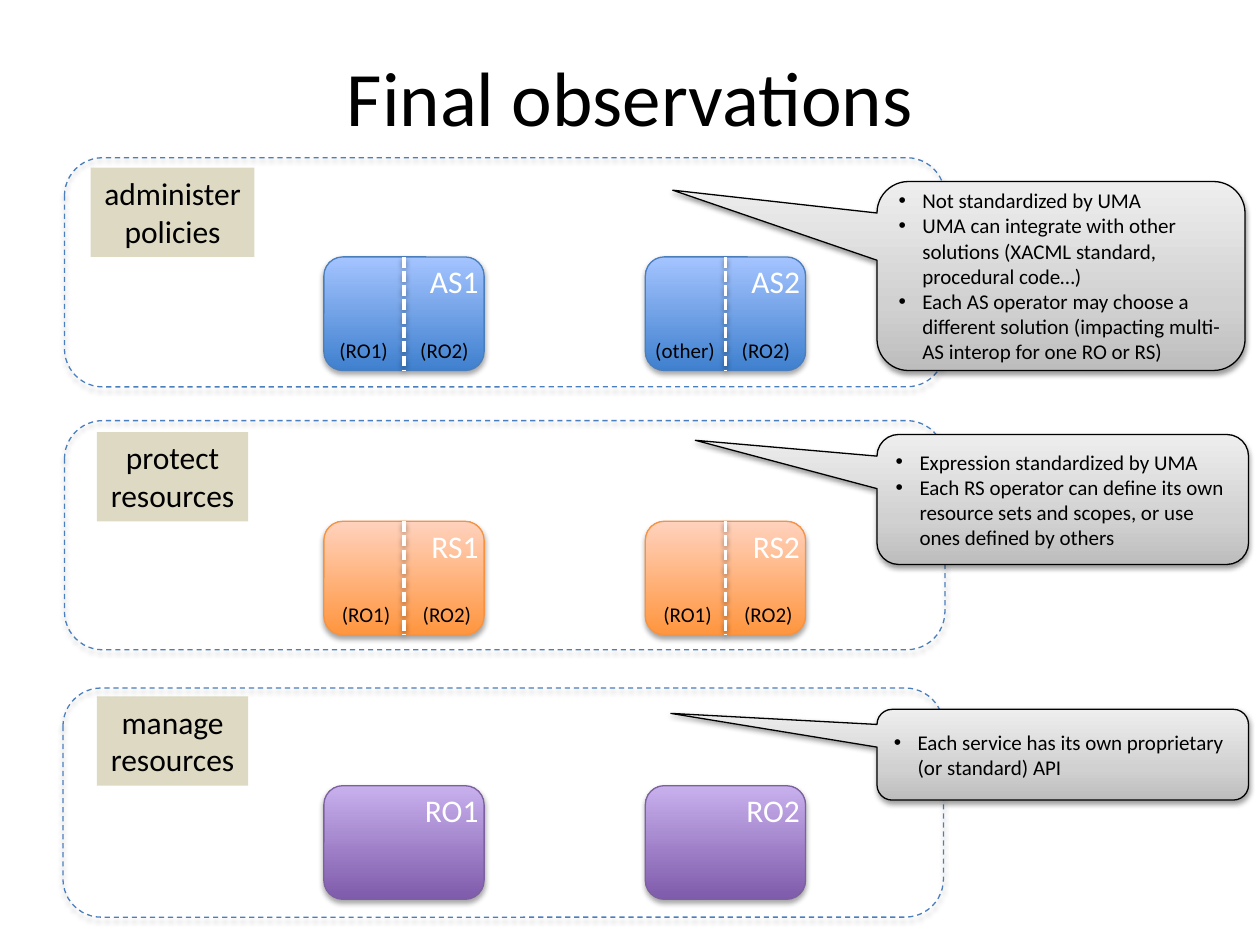
from dataclasses import dataclass

from lxml import etree
from pptx import Presentation
from pptx.dml.color import RGBColor
from pptx.enum import dml, shapes, text
from pptx.oxml import ns
from pptx.util import Cm, Pt

BLACK = RGBColor(0x00, 0x00, 0x00)
WHITE = RGBColor(0xFF, 0xFF, 0xFF)
TAN = RGBColor(0xDD, 0xD9, 0xC3)
FRAME_BLUE = RGBColor(0x4B, 0x7E, 0xBC)
BLUES = RGBColor(0x3F, 0x80, 0xCE), RGBColor(0xA4, 0xC4, 0xFF)
ORANGE_LINE = RGBColor(0xF6, 0x92, 0x40)
ORANGES = RGBColor(0xFF, 0x95, 0x3E), RGBColor(0xFF, 0xD2, 0xBD)
PURPLE_LINE = RGBColor(0x7D, 0x60, 0xA0)
PURPLES = RGBColor(0x7F, 0x5B, 0xAB), RGBColor(0xC8, 0xB0, 0xED)
GREYS = (RGBColor(0xBD, 0xBD, 0xBD), RGBColor(0xD1, 0xD1, 0xD1),
         RGBColor(0xEE, 0xEE, 0xEE))

FONT = "Calibri"
LEFT, CENTER, RIGHT = (text.PP_ALIGN.LEFT, text.PP_ALIGN.CENTER,
                       text.PP_ALIGN.RIGHT)
SHAPE = shapes.MSO_SHAPE

# Lengths in centimetres
ROW_TOP, ROW_PITCH = 3.38, 5.33
BOX_LEFTS, BOX_OFFSET = (6.53, 13.01), 1.8
BOX_WIDTH, BOX_HEIGHT = 3.23, 2.29
OWNER_CENTERS, OWNER_OFFSET = (0.8, 2.43), 3.3
OWNER_WIDTH, OWNER_HEIGHT = 1.8, 0.76
LABEL_CENTER, LABEL_HEIGHT = 3.48, 1.8
CALLOUT_LEFT = 17.68


@dataclass
class Row:
    label: tuple
    label_width: float
    frame: tuple        # left, top
    boxes: tuple
    stops: tuple
    line: RGBColor
    owners: tuple       # one pair for each divided box
    owner_shift: float
    callout: tuple      # top, width, height
    tail: tuple
    notes: tuple


ROWS = (
    Row(("administer", "policies"), 3.3, (1.3, 3.18), ("AS1", "AS2"),
        BLUES, FRAME_BLUE, (("(RO1)", "(RO2)"), ("(other)", "(RO2)")), 0,
        (3.66, 7.42, 3.81), (-1.055, -0.454),
        ("Not standardized by UMA",
         "UMA can integrate with other solutions (XACML standard, "
         "procedural code…)",
         "Each AS operator may choose a different solution (impacting "
         "multi-AS interop for one RO or RS)")),
    Row(("protect", "resources"), 3.05, (1.3, 8.48), ("RS1", "RS2"),
        ORANGES, ORANGE_LINE, (("(RO1)", "(RO2)"), ("(RO1)", "(RO2)")), 0.05,
        (8.76, 7.49, 2.62), (-0.989, -0.455),
        ("Expression standardized by UMA",
         "Each RS operator can define its own resource sets and scopes, "
         "or use ones defined by others")),
    Row(("manage", "resources"), 3.05, (1.27, 13.87), ("RO1", "RO2"),
        PURPLES, PURPLE_LINE, ((), ()), 0,
        (14.3, 7.49, 1.83), (-1.055, -0.455),
        ("Each service has its own proprietary (or standard) API",)),
)


def add_shadow(shape, alpha, distance):
    """Drop a soft black shadow straight down; call after the line is set."""
    effects = etree.SubElement(shape._element.spPr, ns.qn("a:effectLst"))
    shadow = etree.SubElement(
        effects, ns.qn("a:outerShdw"), blurRad=str(Pt(3.1)),
        dist=str(Pt(distance)), dir="5400000", rotWithShape="0")
    color = etree.SubElement(shadow, ns.qn("a:srgbClr"), val=str(BLACK))
    etree.SubElement(color, ns.qn("a:alpha"), val=str(alpha * 1000))


def fill_gradient(shape, colors, positions):
    """Fill from the bottom up with the given colour stops."""
    shape.fill.gradient()
    shape.fill.gradient_angle = 90
    stops = shape._element.spPr.find(".//" + ns.qn("a:gsLst"))
    for stop in list(stops):
        stops.remove(stop)
    for color, position in zip(colors, positions):
        stop = etree.SubElement(stops, ns.qn("a:gs"),
                                pos=str(position * 1000))
        etree.SubElement(stop, ns.qn("a:srgbClr"), val=str(color))


def set_line(shape, color, width, dash=None):
    shape.line.color.rgb = color
    shape.line.width = Pt(width)
    if dash:
        shape.line.dash_style = dash


def write(shape, lines, size, color=BLACK, align=CENTER, wrap=True,
          anchor=text.MSO_ANCHOR.TOP):
    frame = shape.text_frame
    frame.text = "\n".join(lines)
    frame.word_wrap = wrap
    frame.vertical_anchor = anchor
    for para in frame.paragraphs:
        para.alignment = align
        para.font.name = FONT
        para.font.size = Pt(size)
        para.font.color.rgb = color


def add_bullets(shape):
    for para in shape.text_frame.paragraphs:
        props = para._p.get_or_add_pPr()
        props.set("marL", str(Cm(0.48)))
        props.set("indent", str(-Cm(0.48)))
        bullet_font = etree.Element(ns.qn("a:buFont"), typeface="Arial")
        bullet = etree.Element(ns.qn("a:buChar"), char="•")
        props.insert(0, bullet_font)
        props.insert(1, bullet)


def add_box(page, name, left, top, row):
    box = page.shapes.add_shape(SHAPE.ROUNDED_RECTANGLE, Cm(left), Cm(top),
                                Cm(BOX_WIDTH), Cm(BOX_HEIGHT))
    fill_gradient(box, row.stops, (0, 100))
    set_line(box, row.line, 0.75)
    add_shadow(box, 35, 1.8)
    write(box, [name], 18, WHITE, RIGHT)
    frame = box.text_frame
    frame.margin_left = frame.margin_right = 0
    frame.margin_top = frame.margin_bottom = 0
    return box


def add_divider(page, box):
    divider = page.shapes.add_connector(shapes.MSO_CONNECTOR.STRAIGHT,
                                        0, 0, 0, 0)
    divider.begin_connect(box, 0)
    divider.end_connect(box, 2)
    set_line(divider, WHITE, 2, dml.MSO_LINE.SQUARE_DOT)
    add_shadow(divider, 38, 1.6)


def add_owner(page, name, center, top):
    owner = page.shapes.add_textbox(Cm(center - OWNER_WIDTH / 2), Cm(top),
                                    Cm(OWNER_WIDTH), Cm(OWNER_HEIGHT))
    write(owner, [name], 12, wrap=False)
    owner.text_frame.auto_size = text.MSO_AUTO_SIZE.SHAPE_TO_FIT_TEXT


def add_label(page, row, top):
    label = page.shapes.add_shape(
        SHAPE.RECTANGLE, Cm(LABEL_CENTER - row.label_width / 2), Cm(top),
        Cm(row.label_width), Cm(LABEL_HEIGHT))
    label.fill.solid()
    label.fill.fore_color.rgb = TAN
    label.line.fill.background()
    label.shadow.inherit = False
    write(label, row.label, 18, wrap=False)


def add_frame(page, left, top):
    frame = page.shapes.add_shape(SHAPE.ROUNDED_RECTANGLE, Cm(left), Cm(top),
                                  Cm(17.75), Cm(4.62))
    frame.fill.background()
    set_line(frame, FRAME_BLUE, 0.75, dml.MSO_LINE.DASH)
    add_shadow(frame, 35, 1.8)


def add_callout(page, row):
    top, width, height = row.callout
    callout = page.shapes.add_shape(SHAPE.ROUNDED_RECTANGULAR_CALLOUT,
                                    Cm(CALLOUT_LEFT), Cm(top),
                                    Cm(width), Cm(height))
    callout.adjustments[0], callout.adjustments[1] = row.tail
    fill_gradient(callout, GREYS, (0, 35, 100))
    set_line(callout, BLACK, 0.75)
    add_shadow(callout, 38, 1.6)
    write(callout, row.notes, 12, align=LEFT, anchor=text.MSO_ANCHOR.MIDDLE)
    add_bullets(callout)


def add_row(page, row, top):
    add_label(page, row, top)
    for name, left, owners in zip(row.boxes, BOX_LEFTS, row.owners):
        box = add_box(page, name, left, top + BOX_OFFSET, row)
        if owners:
            add_divider(page, box)
        for owner, center in zip(owners, OWNER_CENTERS):
            add_owner(page, owner, left + center + row.owner_shift,
                      top + OWNER_OFFSET)
    add_frame(page, *row.frame)
    add_callout(page, row)


def main():
    deck = Presentation()
    deck.slide_width, deck.slide_height = Cm(25.4), Cm(19.05)
    page = deck.slides.add_slide(deck.slide_layouts[5])

    # Title
    title = page.shapes.title
    title.left, title.top = Cm(1.27), Cm(0.76)
    title.width, title.height = Cm(22.86), Cm(2.34)
    write(title, ["Final observations"], 44, anchor=text.MSO_ANCHOR.MIDDLE)

    # One framed row for each layer
    for index, row in enumerate(ROWS):
        add_row(page, row, ROW_TOP + index * ROW_PITCH)

    deck.save("out.pptx")


if __name__ == "__main__":
    main()
